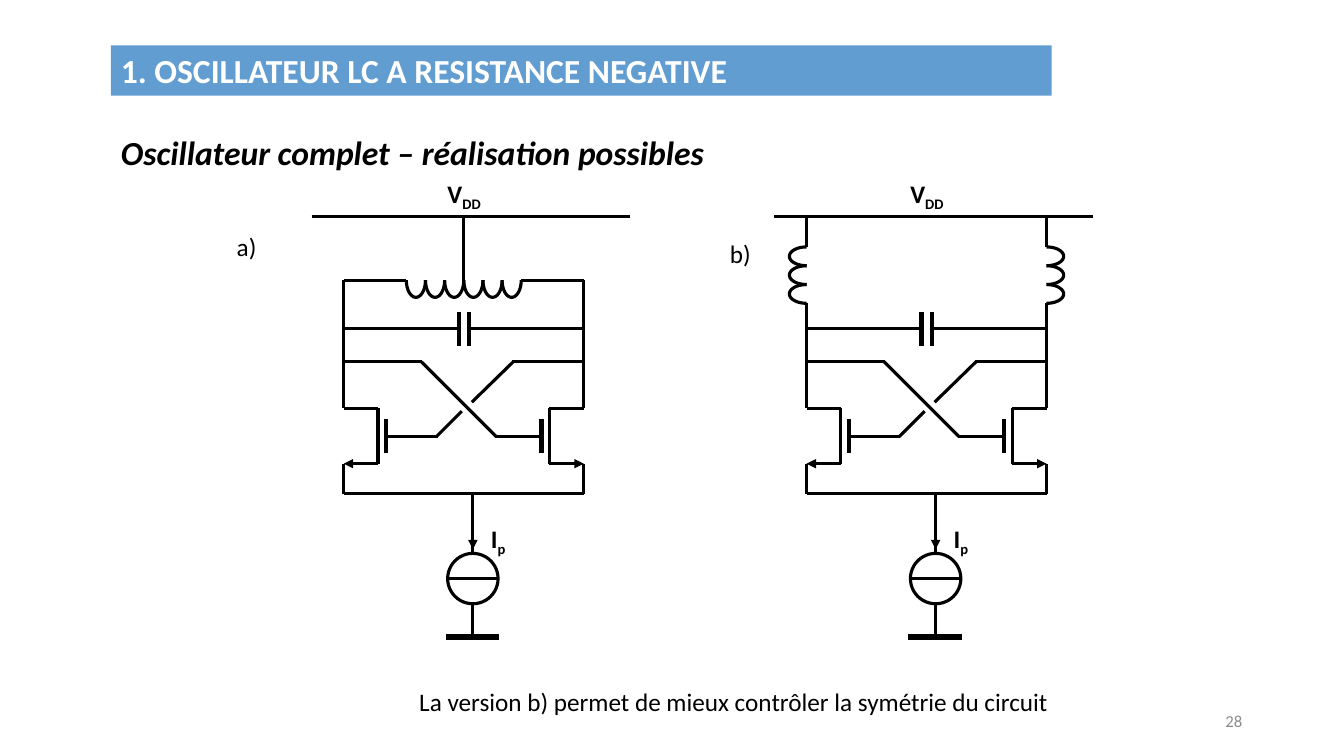
from dataclasses import dataclass
from math import cos, pi, sin

from lxml import etree
from pptx import Presentation
from pptx.dml.color import RGBColor
from pptx.enum.shapes import MSO_CONNECTOR, MSO_SHAPE
from pptx.enum.text import MSO_ANCHOR, PP_ALIGN
from pptx.oxml.ns import qn
from pptx.util import Inches, Pt

STRAIGHT = MSO_CONNECTOR.STRAIGHT
RECT, OVAL = MSO_SHAPE.RECTANGLE, MSO_SHAPE.OVAL
LEFT, RIGHT = PP_ALIGN.LEFT, PP_ALIGN.RIGHT
TOP, MIDDLE = MSO_ANCHOR.TOP, MSO_ANCHOR.MIDDLE


@dataclass(frozen=True)
class Theme:
    font: str = "Calibri"
    ink: RGBColor = RGBColor(0, 0, 0)
    paper: RGBColor = RGBColor(255, 255, 255)
    banner: RGBColor = RGBColor(0x62, 0x9D, 0xD1)
    muted: RGBColor = RGBColor(0x8C, 0x8C, 0x8C)
    heading: int = 24
    body: int = 18
    small: int = 12
    wire: float = 2.25
    plate: float = 3
    ground: float = 4.5


T = Theme()

TITLE = "1. OSCILLATEUR LC A RESISTANCE NEGATIVE"
SUBTITLE = "Oscillateur complet – réalisation possibles"
REMARK = "La version b) permet de mieux contrôler la symétrie du circuit"
PAGE = "28"
# label, its left and top, axis of the circuit
CIRCUITS = [("a)", 2.25, 2.25, 4.6), ("b)", 7.14, 2.32, 9.19)]

# Horizontal positions in a circuit are distances from its axis.
SIDE, CHANNEL, GATE, PLATE, TAIL = 1.19, 0.85, 0.77, 0.05, 0.09
Y_VDD, Y_TANK, Y_CAP, Y_CROSS = 2.15, 2.78, 3.26, 3.59
Y_DRAIN, Y_GATE, Y_SOURCE, Y_JOIN = 4.05, 4.33, 4.6, 4.9
Y_CIRCLE, Y_GROUND, CIRCLE = 5.74, 6.32, 0.5
COIL_TOP, COIL_END = 2.45, 3.01
LOOP, BULGE = 0.19, 0.17

# Drawn on both sides of the axis: x1, y1, x2, y2, width, arrow
MIRRORED = [
    (SIDE, Y_CAP, PLATE, Y_CAP, T.wire, False),
    (PLATE, 3.1, PLATE, 3.43, T.plate, False),
    (SIDE, Y_DRAIN, CHANNEL, Y_DRAIN, T.wire, False),
    (CHANNEL, Y_DRAIN, CHANNEL, Y_SOURCE, T.wire, False),
    (CHANNEL, Y_SOURCE, SIDE, Y_SOURCE, T.wire, True),
    (SIDE, Y_SOURCE, SIDE, Y_JOIN, T.wire, False),
    (GATE, 4.16, GATE, 4.49, T.plate, False),
]
# Drawn once in each circuit
SINGLE = [
    (-1.51, Y_VDD, 1.65, Y_VDD, T.wire, False),
    (-SIDE, Y_CROSS, -0.41, Y_CROSS, T.wire, False),
    (-0.42, Y_CROSS, 0.32, Y_GATE, T.wire, False),
    (0.31, Y_GATE, GATE, Y_GATE, T.wire, False),
    (-GATE, Y_GATE, -0.26, Y_GATE, T.wire, False),
    (-0.27, Y_GATE, -0.02, 4.08, T.wire, False),
    (0.08, 3.99, 0.49, Y_CROSS, T.wire, False),
    (0.48, Y_CROSS, SIDE, Y_CROSS, T.wire, False),
    (-SIDE, Y_JOIN, SIDE, Y_JOIN, T.wire, False),
    (TAIL, Y_JOIN, TAIL, Y_GROUND, T.wire, False),
    (TAIL, 5.11, TAIL, 5.45, T.wire, True),
    (-0.18, Y_GROUND, 0.35, Y_GROUND, T.ground, False),
]


def style_text(sp, runs, size, color, bold=False, italic=False,
               align=LEFT, anchor=TOP):
    """Fill a shape with runs given as (text, is_subscript)."""
    tf = sp.text_frame
    tf.word_wrap = True
    tf.vertical_anchor = anchor
    p = tf.paragraphs[0]
    p.alignment = align
    for text, subscript in runs:
        r = p.add_run()
        r.text = text
        f = r.font
        f.name, f.size, f.bold, f.italic = T.font, Pt(size), bold, italic
        f.color.rgb = color
        if subscript:
            r._r.get_or_add_rPr().set("baseline", "-25000")


def add_text(shapes, box, runs, size, color=T.ink, **style):
    sp = shapes.add_textbox(*map(Inches, box))
    style_text(sp, runs, size, color, **style)


def add_wire(shapes, x1, y1, x2, y2, width=T.wire, arrow=False):
    c = shapes.add_connector(STRAIGHT, *map(Inches, (x1, y1, x2, y2)))
    c.line.color.rgb = T.ink
    c.line.width = Pt(width)
    if arrow:
        etree.SubElement(c.line._get_or_add_ln(), qn("a:tailEnd"), type="triangle")
    etree.SubElement(c._element.spPr, qn("a:effectLst"))


def add_coil(shapes, x, y, loops, step, bulge):
    """Row of half ellipses; step and bulge are (dx, dy) vectors."""
    angles = [pi * i / 24 for i in range(25)]
    for n in range(loops):
        along = [(n + (1 - cos(a)) / 2, sin(a)) for a in angles]
        points = [(Inches(x + step[0] * s + bulge[0] * d),
                   Inches(y + step[1] * s + bulge[1] * d)) for s, d in along]
        fb = shapes.build_freeform(*points[0])
        fb.add_line_segments(points[1:], close=False)
        sp = fb.convert_to_shape()
        sp.shadow.inherit = False
        sp.fill.background()
        sp.line.color.rgb = T.ink
        sp.line.width = Pt(T.wire)


def add_center_tapped_coil(shapes, axis):
    half = 3 * LOOP
    add_coil(shapes, axis - half, Y_TANK, 6, (LOOP, 0), (0, BULGE))
    add_wire(shapes, axis, Y_VDD, axis, Y_TANK + 0.04)
    for side in (-1, 1):
        x = axis + side * SIDE
        add_wire(shapes, x, Y_TANK, axis + side * half, Y_TANK)
        add_wire(shapes, x, Y_TANK, x, Y_DRAIN)


def add_twin_coils(shapes, axis):
    for side in (-1, 1):
        x = axis + side * SIDE
        add_wire(shapes, x, Y_VDD, x, COIL_TOP)
        add_coil(shapes, x, COIL_TOP, 3, (0, (COIL_END - COIL_TOP) / 3),
                 (side * BULGE, 0))
        add_wire(shapes, x, COIL_END, x, Y_DRAIN)


def add_circuit(shapes, axis, add_inductor):
    add_inductor(shapes, axis)
    for x1, y1, x2, y2, width, arrow in MIRRORED:
        for side in (-1, 1):
            add_wire(shapes, axis + side * x1, y1, axis + side * x2, y2, width, arrow)
    for x1, y1, x2, y2, width, arrow in SINGLE:
        add_wire(shapes, axis + x1, y1, axis + x2, y2, width, arrow)

    left = axis + TAIL - CIRCLE / 2
    sp = shapes.add_shape(OVAL, *map(Inches, (left, Y_CIRCLE - CIRCLE / 2, CIRCLE, CIRCLE)))
    sp.shadow.inherit = False
    sp.fill.solid()
    sp.fill.fore_color.rgb = T.paper
    sp.line.color.rgb = T.ink
    sp.line.width = Pt(T.wire)
    add_wire(shapes, left, Y_CIRCLE, left + CIRCLE, Y_CIRCLE)

    add_text(shapes, (axis + 0.17, 5.14, 0.42, 0.4), [("I", False), ("p", True)],
             T.body, bold=True)
    add_text(shapes, (axis - 0.26, 1.72, 0.77, 0.4), [("V", False), ("DD", True)],
             T.body, bold=True)


def main():
    prs = Presentation()
    prs.slide_width, prs.slide_height = Inches(13.33), Inches(7.5)
    shapes = prs.slides.add_slide(prs.slide_layouts[6]).shapes

    banner = shapes.add_shape(RECT, *map(Inches, (1.1, 0.45, 9.33, 0.5)))
    banner.shadow.inherit = False
    banner.fill.solid()
    banner.fill.fore_color.rgb = T.banner
    banner.line.fill.background()
    style_text(banner, [(TITLE, False)], T.heading, T.paper, bold=True)
    add_text(shapes, (1.1, 1.26, 6.12, 0.5), [(SUBTITLE, False)], T.heading,
             bold=True, italic=True)

    inductors = (add_center_tapped_coil, add_twin_coils)
    for (label, x, y, axis), add_inductor in zip(CIRCUITS, inductors):
        add_circuit(shapes.add_group_shape().shapes, axis, add_inductor)
        add_text(shapes, (x, y, 0.47, 0.4), [(label, False)], T.body)

    add_text(shapes, (4.06, 6.76, 6.57, 0.4), [(REMARK, False)], T.body)
    add_text(shapes, (9.42, 6.95, 3, 0.4), [(PAGE, False)], T.small, T.muted,
             align=RIGHT, anchor=MIDDLE)
    prs.save("out.pptx")


if __name__ == "__main__":
    main()
